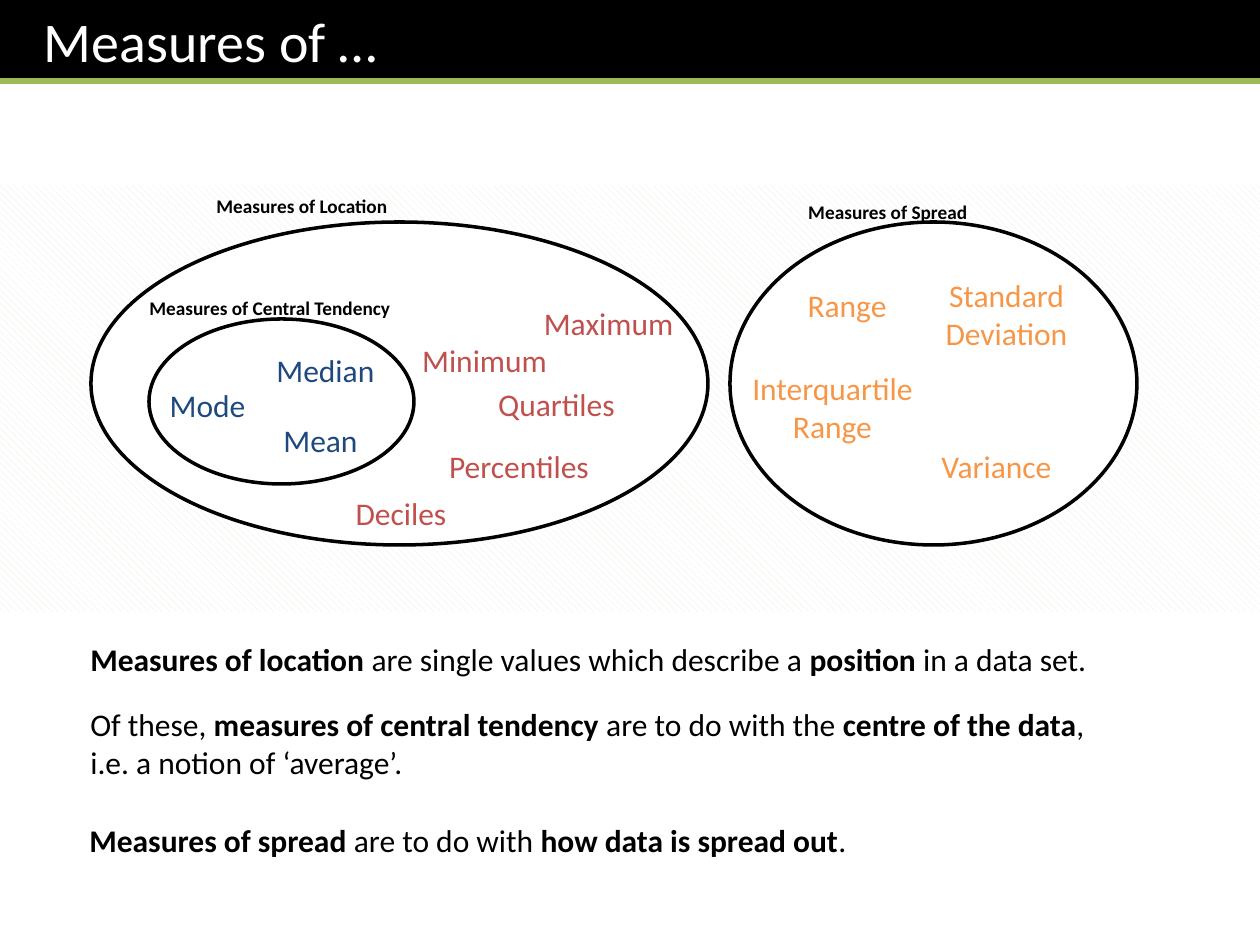
from lxml import etree
from pptx import Presentation
from pptx.dml.color import RGBColor
from pptx.enum.dml import MSO_PATTERN
from pptx.enum.shapes import MSO_CONNECTOR, MSO_SHAPE
from pptx.enum.text import MSO_ANCHOR, MSO_AUTO_SIZE, PP_ALIGN
from pptx.oxml.ns import qn
from pptx.util import Emu, Pt

PX = 914400 // 126
RECT, OVAL = MSO_SHAPE.RECTANGLE, MSO_SHAPE.OVAL
STRAIGHT = MSO_CONNECTOR.STRAIGHT
HATCH = MSO_PATTERN.WIDE_DOWNWARD_DIAGONAL
LEFT, MID = PP_ALIGN.LEFT, PP_ALIGN.CENTER
TOP, FIT = MSO_ANCHOR.TOP, MSO_AUTO_SIZE.SHAPE_TO_FIT_TEXT

BLACK = RGBColor(0x00, 0x00, 0x00)
WHITE = RGBColor(0xFF, 0xFF, 0xFF)
CREAM = RGBColor(0xEE, 0xEC, 0xE1)
GREEN = RGBColor(0x9B, 0xBB, 0x59)
BLUE = RGBColor(0x1F, 0x49, 0x7D)
RED = RGBColor(0xC0, 0x50, 0x4D)
ORANGE = RGBColor(0xF7, 0x96, 0x46)


def emu(*lengths):
    return [Emu(n * PX) for n in lengths]


class Page:
    """Holds the slide and its font."""

    def __init__(self, slide, font):
        self.slide, self.font = slide, font

    def shape(self, kind, box, color, edge=None):
        item = self.slide.shapes.add_shape(kind, *emu(*box))
        item.shadow.inherit = False
        item.fill.solid()
        item.fill.fore_color.rgb = color
        if edge:
            item.line.color.rgb = edge
            item.line.width = Pt(2)
        else:
            item.line.fill.background()
        return item

    def band(self, box):
        fill = self.shape(RECT, box, WHITE).fill
        fill.patterned()
        fill.pattern = HATCH
        fill.fore_color.rgb, fill.back_color.rgb = CREAM, WHITE

    def rule(self, ends, color, width):
        line = self.slide.shapes.add_connector(STRAIGHT, *emu(*ends))
        line.line.color.rgb = color
        line.line.width = Pt(width)
        etree.SubElement(line._element.spPr, qn("a:effectLst"))

    def letter(self, frame, text, size, color, align=LEFT, bold=False):
        """Fill a text frame; parts between asterisks are bold."""
        for name, value in {"word_wrap": True, "auto_size": FIT,
                            "vertical_anchor": TOP}.items():
            setattr(frame, name, value)
        para = frame.paragraphs[0]
        para.alignment = align
        for i, part in enumerate(text.split("*")):
            if not part:
                continue
            run = para.add_run()
            run.text = part
            run.font.color.rgb = color
            for name, value in {"name": self.font, "size": Pt(size),
                                "bold": bold or i % 2 == 1}.items():
                setattr(run.font, name, value)

    def text(self, box, *args, **style):
        item = self.slide.shapes.add_textbox(*emu(*box))
        self.letter(item.text_frame, *args, **style)

    def title(self, box, text):
        frame = self.shape(RECT, box, BLACK).text_frame
        frame.margin_left = Emu(44 * PX)
        self.letter(frame, text, 32, WHITE)


OVALS = [(91, 222, 617, 323), (730, 222, 407, 323), (149, 319, 265, 165)]

LABELS = [
    (137, 290, "Measures of Central Tendency", LEFT),
    (204, 188, "Measures of Location", LEFT),
    (716, 194, "Measures of Spread", MID),
]

WORDS = {
    ORANGE: [
        (788, 280, 118, 50, "Range"),
        (730, 363, 205, 89, "Interquartile Range"),
        (927, 270, 159, 89, "Standard Deviation"),
        (917, 441, 159, 50, "Variance"),
    ],
    BLUE: [
        (144, 380, 127, 50, "Mode"),
        (262, 345, 127, 50, "Median"),
        (257, 415, 127, 50, "Mean"),
    ],
    RED: [
        (476, 379, 161, 50, "Quartiles"),
        (431, 441, 176, 50, "Percentiles"),
        (313, 488, 176, 50, "Deciles"),
        (528, 298, 161, 50, "Maximum"),
        (404, 335, 161, 50, "Minimum"),
    ],
}

NOTES = [
    (78, 634, 50, "*Measures of location *are single values which describe a "
                  "*position* in a data set."),
    (78, 699, 89, "Of these,* measures of central tendency *are to do with "
                  "the *centre of the data*, i.e. a notion of ‘average’."),
    (77, 815, 50, "*Measures of spread *are to do with "
                  "*how data is spread out*."),
]


def main():
    deck = Presentation()
    deck.slide_width, deck.slide_height = emu(1260, 945)
    page = Page(deck.slides.add_slide(deck.slide_layouts[6]), "Calibri")

    page.band((0, 185, 1260, 427))
    page.title((0, 0, 1260, 83), "Measures of …")
    page.rule((0, 81, 1260, 81), GREEN, 3)
    for box in OVALS:
        page.shape(OVAL, box, WHITE, BLACK)
    for x, y, text, align in LABELS:
        page.text((x, y, 344, 37), text, 11, BLACK, align=align, bold=True)
    for color, words in WORDS.items():
        for *box, text in words:
            page.text(box, text, 18, color, align=MID)
    for x, y, high, text in NOTES:
        page.text((x, y, 1046, high), text, 18, BLACK)

    deck.save("out.pptx")


if __name__ == "__main__":
    main()
